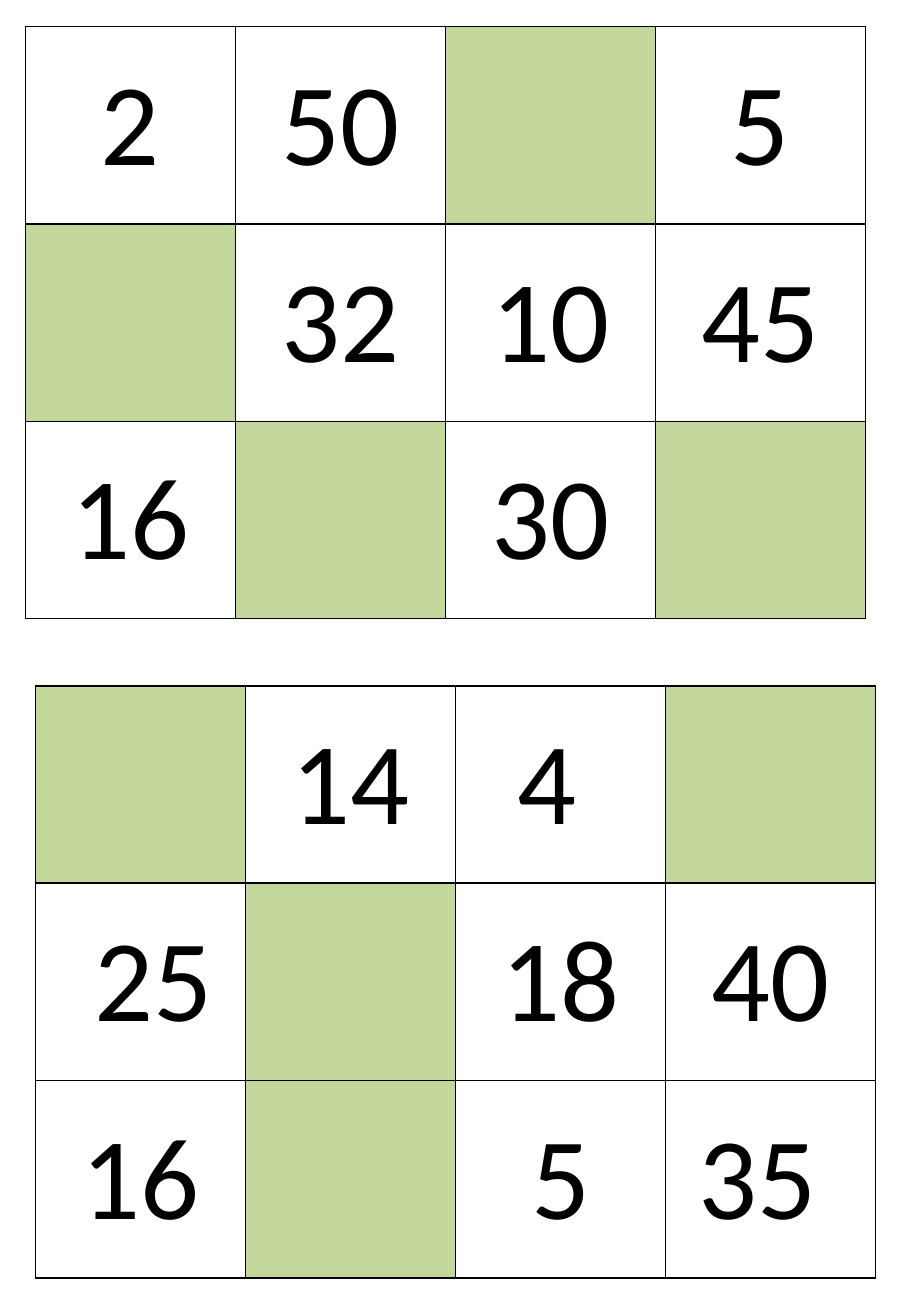
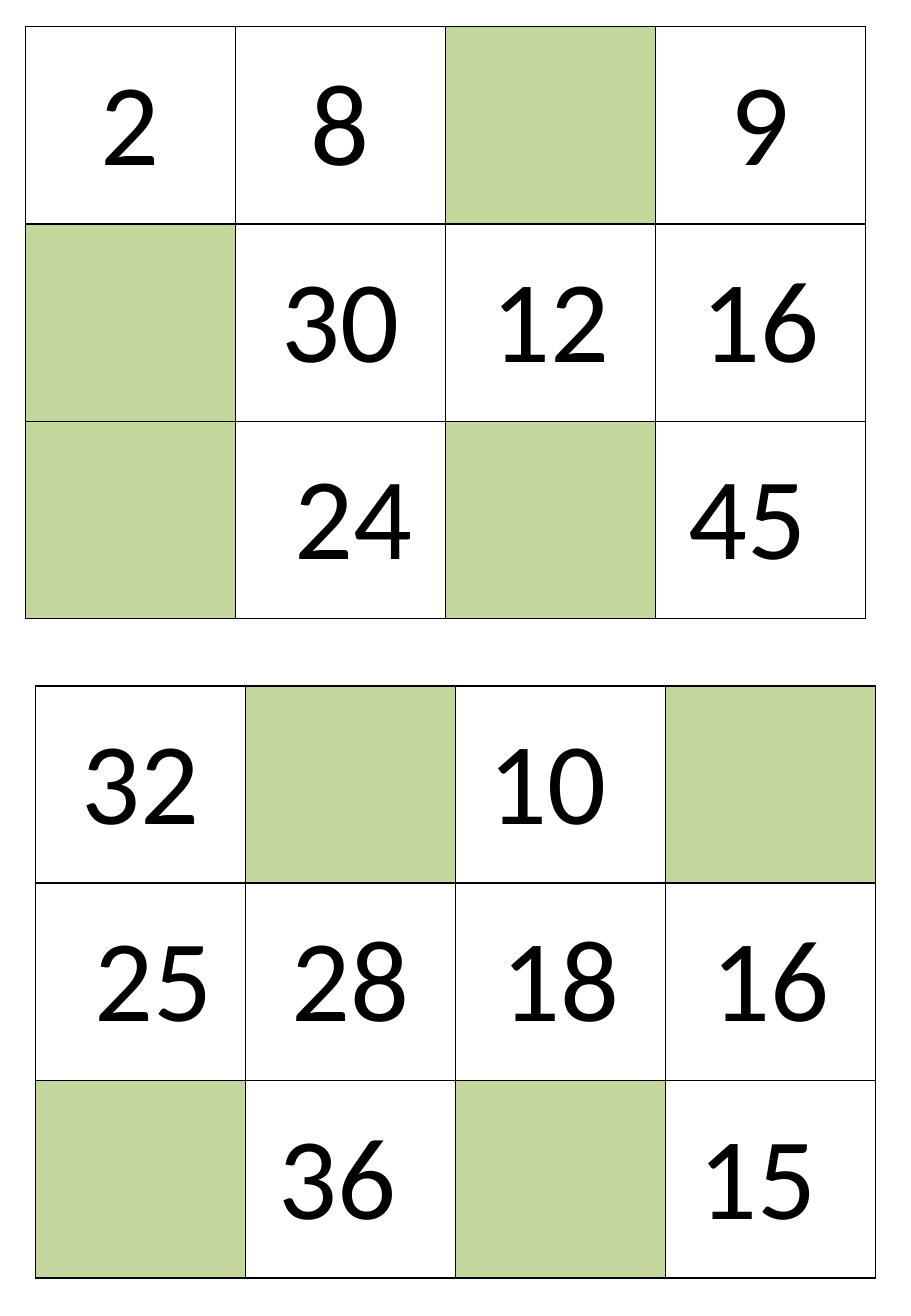
from lxml.etree import SubElement
from pptx import Presentation
from pptx.dml.color import RGBColor
from pptx.enum.text import MSO_ANCHOR as Anchor, PP_ALIGN as Align
from pptx.oxml.ns import qn
from pptx.util import Pt

EMU_PER_PX = 9525
PAGE_WIDTH, PAGE_HEIGHT = 720, 1040
COLUMN_WIDTH, ROW_HEIGHT = 166, 156
CELL_INSET = 7
NUDGE = 21
FONT, NUMBER_SIZE = "Calibri", 69
BLACK, WHITE, GREEN = "000000", "FFFFFF", "C3D69B"
CARD_CORNERS = [(20, 21), (28, 542)]

LEFT, RIGHT = "left", "right"
PAGES = [
    [
        [["2", "50", "", "5"],
         ["", "32", "10", "45"],
         ["16", "", "30", ""]],
        [["", "14", ("4", LEFT), ""],
         [("25", RIGHT), "", "18", "40"],
         ["16", "", "5", ("35", LEFT)]],
    ],
    [
        [["2", "8", "", "9"],
         ["", "30", "12", "16"],
         ["", ("24", RIGHT), "", ("45", LEFT)]],
        [["32", "", ("10", LEFT), ""],
         [("25", RIGHT), "28", "18", "16"],
         ["", ("36", LEFT), "", ("15", LEFT)]],
    ],
]


def px(length):
    return length * EMU_PER_PX


def color(value):
    return RGBColor.from_string(value)


def add_borders(cell):
    properties = cell._tc.get_or_add_tcPr()
    for side in ("lnL", "lnR", "lnT", "lnB"):
        line = SubElement(properties, qn(f"a:{side}"), w=str(Pt(1)))
        fill = SubElement(line, qn("a:solidFill"))
        SubElement(fill, qn("a:srgbClr"), val=BLACK)


def fill_cell(cell, entry):
    number, shift = entry if isinstance(entry, tuple) else (entry, None)
    add_borders(cell)
    cell.fill.solid()
    cell.fill.fore_color.rgb = color(WHITE if number else GREEN)
    cell.vertical_anchor = Anchor.MIDDLE
    cell.margin_top = cell.margin_bottom = 0
    cell.margin_left = px(CELL_INSET + (NUDGE if shift == RIGHT else 0))
    cell.margin_right = px(CELL_INSET + (NUDGE if shift == LEFT else 0))
    if number:
        para = cell.text_frame.paragraphs[0]
        para.text = number
        para.alignment = Align.CENTER
        font = para.runs[0].font
        font.name = FONT
        font.size = Pt(NUMBER_SIZE)
        font.color.rgb = color(BLACK)


def add_card(page, left, top, rows):
    row_count, column_count = len(rows), len(rows[0])
    table = page.shapes.add_table(
        row_count, column_count, px(left), px(top),
        px(column_count * COLUMN_WIDTH), px(row_count * ROW_HEIGHT)).table
    table.first_row = table.horz_banding = False
    for row_index, row in enumerate(rows):
        for column_index, entry in enumerate(row):
            fill_cell(table.cell(row_index, column_index), entry)


def add_page(deck, cards):
    page = deck.slides.add_slide(deck.slide_layouts[6])
    for (left, top), rows in zip(CARD_CORNERS, cards):
        add_card(page, left, top, rows)


def main():
    deck = Presentation()
    deck.slide_width, deck.slide_height = px(PAGE_WIDTH), px(PAGE_HEIGHT)
    for cards in PAGES:
        add_page(deck, cards)
    deck.save("out.pptx")


if __name__ == "__main__":
    main()
